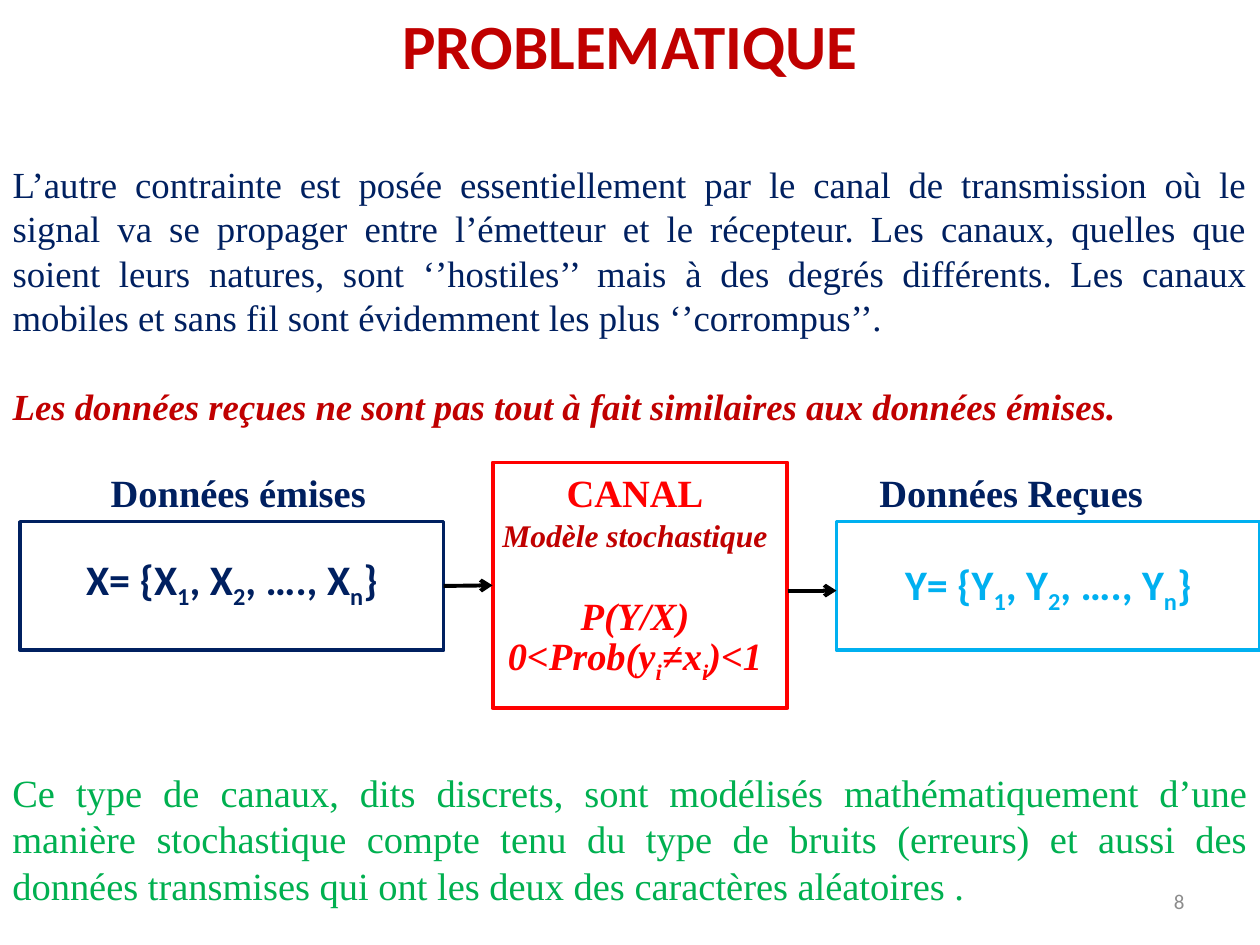
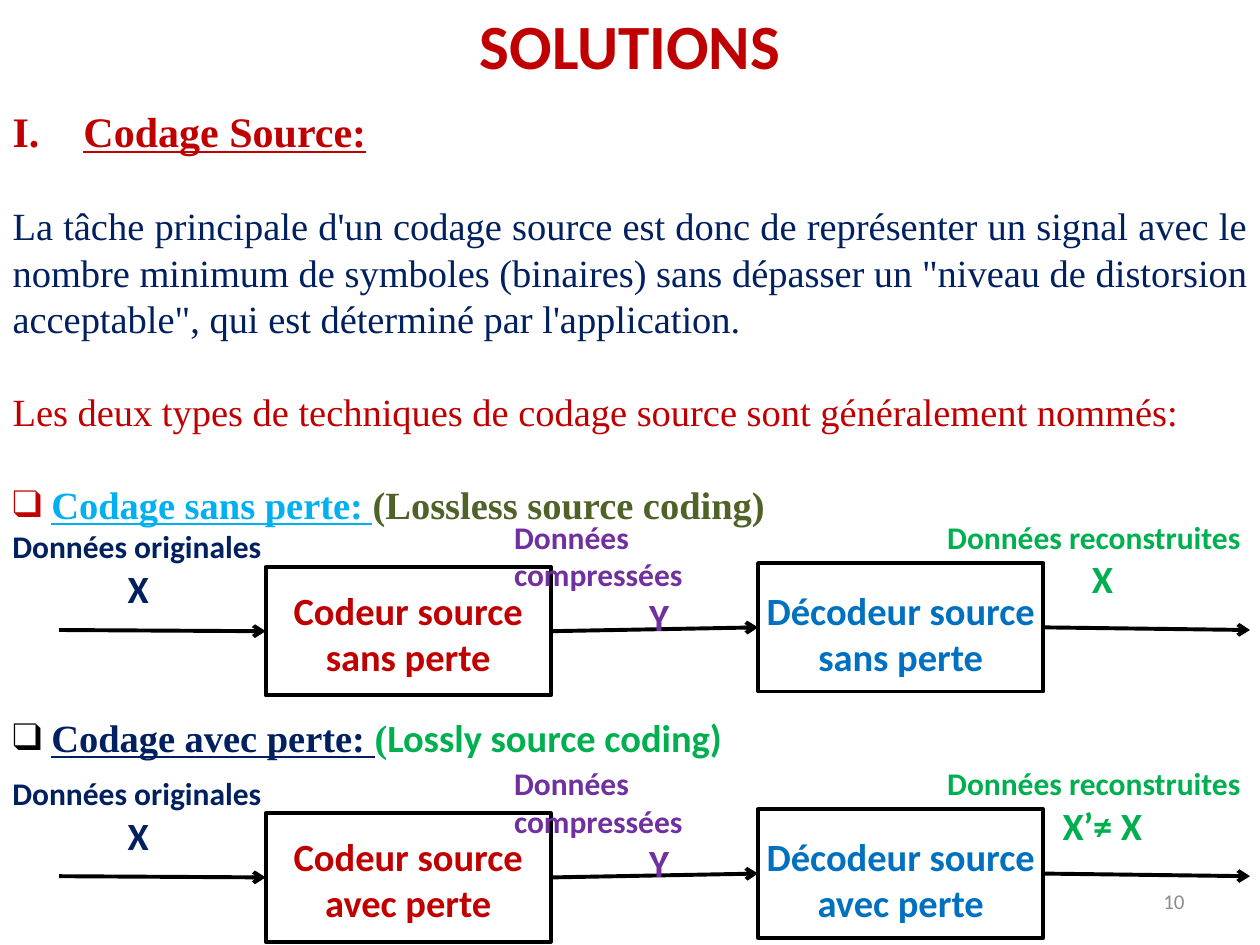
import collections
import dataclasses
import functools

import lxml.etree
import pptx
import pptx.dml.color
import pptx.enum.shapes
import pptx.enum.text
import pptx.oxml.ns
import pptx.util

Pt = pptx.util.Pt
qn = pptx.oxml.ns.qn
ALIGN = pptx.enum.text.PP_ALIGN
ANCHOR = pptx.enum.text.MSO_ANCHOR
SERIF = "Times New Roman"
SANS = "Calibri"
SERIF_LEADING = 1.21
COLORS = {
    "white": "FFFFFF", "black": "000000", "gray": "8C8C8C",
    "crimson": "C00000", "red": "FF0000", "navy": "002060",
    "sky": "00B0F0", "blue": "0070C0", "green": "00B050",
    "olive": "4F6228", "purple": "7030A0",
}
Box = collections.namedtuple("Box", "left top width height")


@dataclasses.dataclass
class Run:
    text: str
    color: str
    size: float = 22
    font: str = SERIF
    bold: bool = False
    italic: bool = False
    underline: bool = False
    subscript: bool = False


@dataclasses.dataclass
class Line:
    runs: list
    align: object = ALIGN.LEFT
    before: float = 0
    bullet: str = ""
    indent: float = 0


SansRun = functools.partial(Run, font=SANS, bold=True)
Centered = functools.partial(Line, align=ALIGN.CENTER)
Justified = functools.partial(Line, align=ALIGN.JUSTIFY)


def rgb(name):
    return pptx.dml.color.RGBColor.from_string(COLORS[name])


def within(box, left, top, width, height):
    return Box(box.left + left, box.top + top, width, height)


def add_run(paragraph, content):
    run = paragraph.add_run()
    run.text = content.text
    font = run.font
    font.name, font.size = content.font, Pt(content.size)
    font.bold, font.italic = content.bold, content.italic
    font.underline = content.underline
    font.color.rgb = rgb(content.color)
    if content.subscript:
        run._r.get_or_add_rPr().set("baseline", "-25000")


def format_paragraph(paragraph, line):
    paragraph.alignment = line.align
    paragraph.space_before = Pt(line.before)
    first = line.runs[0]
    if first.font == SERIF:
        paragraph.line_spacing = Pt(round(first.size * SERIF_LEADING, 1))
    properties = paragraph._p.get_or_add_pPr()
    properties.set("marL", str(Pt(line.indent)))
    properties.set("indent", str(-Pt(line.indent)))
    if line.bullet == "I.":
        number = lxml.etree.SubElement(properties, qn("a:buAutoNum"))
        number.set("type", "romanUcPeriod")
    elif line.bullet:
        lxml.etree.SubElement(properties, qn("a:buFont")).set("typeface", SERIF)
        lxml.etree.SubElement(properties, qn("a:buChar")).set("char", line.bullet)
    else:
        lxml.etree.SubElement(properties, qn("a:buNone"))


def write(shape, lines, anchor=ANCHOR.TOP):
    frame = shape.text_frame
    frame.word_wrap = True
    frame.auto_size = pptx.enum.text.MSO_AUTO_SIZE.NONE
    frame.vertical_anchor = anchor
    for index, line in enumerate(lines):
        paragraph = frame.add_paragraph() if index else frame.paragraphs[0]
        format_paragraph(paragraph, line)
        for run in line.runs:
            add_run(paragraph, run)


def fill_placeholder(shape, box, lines):
    shape.left, shape.top, shape.width, shape.height = map(Pt, box)
    write(shape, lines)


def add_text(slide, box, lines, anchor=ANCHOR.TOP):
    write(slide.shapes.add_textbox(*map(Pt, box)), lines, anchor)


def add_rectangle(slide, box, line_color, weight=2.25, fill=None):
    rectangle = slide.shapes.add_shape(
        pptx.enum.shapes.MSO_SHAPE.RECTANGLE, *map(Pt, box))
    rectangle.shadow.inherit = False
    if fill:
        rectangle.fill.solid()
        rectangle.fill.fore_color.rgb = rgb(fill)
    else:
        rectangle.fill.background()
    rectangle.line.color.rgb = rgb(line_color)
    rectangle.line.width = Pt(weight)
    return rectangle


def add_arrow(slide, start, end, y, source=None, target=None):
    connector = slide.shapes.add_connector(
        pptx.enum.shapes.MSO_CONNECTOR.STRAIGHT, Pt(start), Pt(y), Pt(end), Pt(y))
    if source is not None:
        connector.begin_connect(source, 3)
    if target is not None:
        connector.end_connect(target, 1)
    connector.line.color.rgb = rgb("black")
    connector.line.width = Pt(2.25)
    outline = connector.line._get_or_add_ln()
    lxml.etree.SubElement(outline, qn("a:tailEnd")).set("type", "arrow")
    lxml.etree.SubElement(connector._element.spPr, qn("a:effectLst"))


def add_base_slide(presentation, title, number, body_box, body):
    slide = presentation.slides.add_slide(presentation.slide_layouts[1])
    fill_placeholder(slide.shapes.title, Box(0, 0, 720, 51),
                     [Centered([SansRun(title, "crimson", 36)])])
    fill_placeholder(slide.placeholders[1], body_box, body)
    add_text(slide, Box(516, 500.5, 168, 28.8),
             [Line([SansRun(number, "gray", 12, bold=False)], ALIGN.RIGHT)],
             ANCHOR.MIDDLE)
    return slide


def sequence_line(letter, color):
    parts = [(f"{letter}= {{{letter}", False), ("1", True), (f", {letter}", False),
             ("2", True), (f", …., {letter}", False), ("n", True), ("}", False)]
    return Centered([SansRun(text, color, 24, subscript=subscript)
                     for text, subscript in parts])


def add_data_block(slide, box, letter, color, heading, heading_left, text_top):
    rectangle = add_rectangle(
        slide, within(box, 0, 33.8, box.width, box.height - 33.8), color, 2)
    add_text(slide, within(box, 0, text_top, box.width, 36),
             [sequence_line(letter, color)])
    add_text(slide, within(box, heading_left, 0, 186, 33.8),
             [Line([Run(heading, "navy", bold=True)])])
    return rectangle


def add_channel(slide, box):
    rectangle = add_rectangle(slide, box, "red", fill="white")
    formula = functools.partial(Run, color="red", bold=True, italic=True)
    probability = [("0<Prob(y", False), ("i", True), ("≠x", False),
                   ("i", True), (")<1", False)]
    add_text(slide, within(box, -5.8, 0, box.width + 5.8, 131), [
        Centered([Run("CANAL", "red", bold=True)]),
        Centered([Run("Modèle stochastique", "crimson", 18, bold=True, italic=True)]),
        Centered([formula("P(Y/X)")], before=21.8),
        Centered([formula(text, subscript=subscript)
                  for text, subscript in probability]),
    ])
    return rectangle


def add_problem_slide(presentation):
    slide = add_base_slide(presentation, "PROBLEMATIQUE", "8", Box(0, 88.6, 720, 160), [
        Justified([Run(
            "L’autre contrainte est posée essentiellement par le canal de transmission "
            "où le signal va se propager entre l’émetteur et le récepteur. Les canaux, "
            "quelles que soient leurs natures, sont ‘’hostiles’’ mais à des degrés "
            "différents. Les canaux mobiles et sans fil sont évidemment les plus "
            "‘’corrompus’’. ", "navy", 21)]),
        Justified([Run(
            "Les données reçues ne sont pas tout à fait similaires aux données émises.",
            "crimson", 21, bold=True, italic=True)], before=25.4),
    ])
    sent = add_data_block(slide, Box(11.5, 264.3, 242, 107.3), "X", "navy",
                          "Données émises", 44.7, 48.2)
    add_data_block(slide, Box(478, 264.3, 242, 107.3), "Y", "sky",
                   "Données Reçues", 17.4, 51.1)
    channel = add_channel(slide, Box(281.5, 264.3, 168.5, 140.4))
    add_arrow(slide, 253.5, 281.5, 334.5, sent, channel)
    add_arrow(slide, 450, 478, 337.5)
    add_text(slide, Box(0, 435.6, 720, 87), [Justified([Run(
        "Ce type de canaux, dits discrets, sont modélisés mathématiquement d’une "
        "manière stochastique compte tenu du type de bruits (erreurs) et aussi des "
        "données transmises qui ont les deux des caractères aléatoires .", "green")])])


def add_coding_chain(slide, box, loss, result):
    line_y = box.top + 67.7
    coder = add_rectangle(slide, within(box, 151.8, 31.7, 163, 73.4), "black")
    decoder = add_rectangle(slide, within(box, 433.2, 29.5, 163, 73.4), "black")
    add_arrow(slide, box.left + 33.8, box.left + 151.8, line_y, target=coder)
    add_arrow(slide, box.left + 314.8, box.left + 433.2, line_y, coder, decoder)
    add_arrow(slide, box.left + 596.2, box.left + 714.3, line_y, decoder)
    for name, color, left, width in (("Codeur", "crimson", 151.8, 163),
                                     ("Décodeur", "blue", 427.7, 174)):
        add_text(slide, within(box, left, 39.6, width, 60.5),
                 [Centered([SansRun(f"{name} source {loss} perte", color)])])
    for stage, symbol, color, left, top, width in (
            ("originales", "X", "navy", 0, 5.6, 158),
            ("compressées", "Y", "purple", 286.7, 0, 180),
            ("reconstruites", result, "green", 534.2, 0, 191.5)):
        add_text(slide, within(box, left, top, width, 55.4), [
            Line([SansRun(f"Données {stage}", color, 18)]),
            Centered([SansRun(symbol, color)]),
        ])


def add_solution_slide(presentation):
    gap = 26.6
    slide = add_base_slide(presentation, "SOLUTIONS", "10", Box(0, 56.2, 720, 479.5), [
        Line([Run("Codage Source:", "crimson", 24, bold=True, underline=True)],
             bullet="I.", indent=40.5),
        Justified([Run(
            "La tâche principale d'un codage source est donc de représenter un signal "
            "avec le nombre minimum de symboles (binaires) sans dépasser un \"niveau de "
            "distorsion acceptable\", qui est déterminé par l'application. ", "navy")],
            before=gap),
        Justified([Run(
            "Les deux types de techniques de codage source sont généralement nommés:",
            "crimson")], before=gap),
        Justified([Run(" ", "crimson", bold=True),
                   Run("Codage sans perte: ", "sky", bold=True, underline=True),
                   Run("(Lossless source coding)", "olive", bold=True)],
                  before=gap, bullet="❑"),
        Justified([Run(" ", "black"),
                   Run("Codage avec perte: ", "navy", bold=True, underline=True),
                   Run("(", "green", bold=True),
                   SansRun("Lossly source coding)", "green")],
                  before=4 * gap, bullet="❑"),
    ])
    for row, (loss, result) in enumerate((("sans", "X"), ("avec", "X’≠ X"))):
        add_coding_chain(slide, Box(0, 292.3 + row * 140.7, 720, 105), loss, result)


def main():
    presentation = pptx.Presentation()
    presentation.slide_width, presentation.slide_height = Pt(720), Pt(540)
    add_problem_slide(presentation)
    add_solution_slide(presentation)
    presentation.save("out.pptx")


if __name__ == "__main__":
    main()
